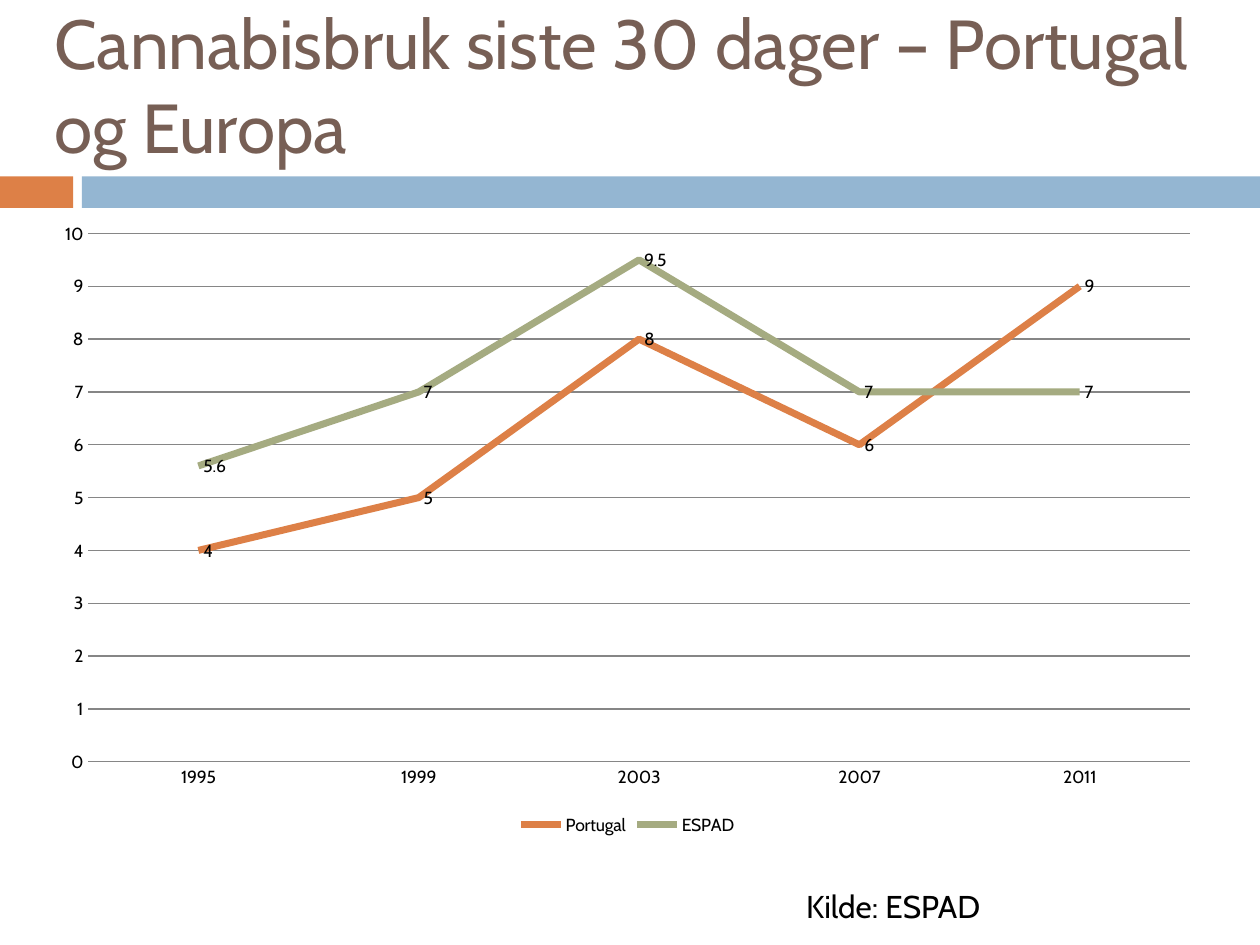
from pptx import Presentation
from pptx.chart.data import CategoryChartData
from pptx.dml.color import RGBColor
from pptx.enum.chart import (XL_CHART_TYPE, XL_LABEL_POSITION, XL_LEGEND_POSITION,
                             XL_MARKER_STYLE, XL_TICK_MARK)
from pptx.enum.shapes import MSO_SHAPE
from pptx.enum.text import MSO_ANCHOR, MSO_AUTO_SIZE, PP_ALIGN
from pptx.util import Inches, Pt

COLORS = {"orange": "DD8047", "blue": "94B6D2", "green": "A5AB81",
          "brown": "775F55", "black": "000000", "grid": "868686"}
YEARS = ["1995", "1999", "2003", "2007", "2011"]
SERIES = {"Portugal": ([4, 5, 8, 6, 9], "orange"),
          "ESPAD": ([5.6, 7, 9.5, 7, 7], "green")}


class Deck:
    font = "Cabin"

    def __init__(self, width, height):
        self.prs = Presentation()
        self.prs.slide_width = Inches(width)
        self.prs.slide_height = Inches(height)
        self.s = None

    def add_slide(self):
        self.s = self.prs.slides.add_slide(self.prs.slide_layouts[5])

    def box(self, x, y, w, h):
        width, height = self.prs.slide_width, self.prs.slide_height
        return [round(share * side / 100) for share, side in
                ((x, width), (y, height), (w, width), (h, height))]

    def color(self, name):
        return RGBColor.from_string(COLORS[name])

    def style(self, font, size, color):
        font.name = self.font
        font.size = Pt(size)
        font.color.rgb = self.color(color)

    def fill_text(self, tf, text, size, color):
        tf.word_wrap = True
        p = tf.paragraphs[0]
        p.text = text
        p.alignment = PP_ALIGN.LEFT
        self.style(p.font, size, color)

    def title(self, text, *area):
        sp = self.s.shapes.title
        sp.left, sp.top, sp.width, sp.height = self.box(*area)
        tf = sp.text_frame
        tf.auto_size = MSO_AUTO_SIZE.NONE
        tf.vertical_anchor = MSO_ANCHOR.MIDDLE
        self.fill_text(tf, text, 39.6, "brown")

    def bar(self, color, *area):
        sp = self.s.shapes.add_shape(MSO_SHAPE.RECTANGLE, *self.box(*area))
        sp.shadow.inherit = False
        sp.fill.solid()
        sp.fill.fore_color.rgb = self.color(color)
        sp.line.fill.background()

    def text(self, text, *area):
        tf = self.s.shapes.add_textbox(*self.box(*area)).text_frame
        self.fill_text(tf, text, 18, "black")
        tf.auto_size = MSO_AUTO_SIZE.SHAPE_TO_FIT_TEXT

    def line_chart(self, categories, series, *area):
        data = CategoryChartData()
        data.categories = categories
        for name, (values, _) in series.items():
            data.add_series(name, values)
        chart = self.s.shapes.add_chart(
            XL_CHART_TYPE.LINE, *self.box(*area), data).chart
        self.style(chart.font, 10, "black")
        chart.has_title = False
        chart.has_legend = True
        chart.legend.position = XL_LEGEND_POSITION.BOTTOM
        chart.legend.include_in_layout = False
        self.axes(chart)
        plot = chart.plots[0]
        plot.vary_by_categories = False
        for line in plot.series:
            self.series_line(line, series[line.name][1])

    def axes(self, chart):
        for axis in (chart.category_axis, chart.value_axis):
            axis.major_tick_mark = axis.minor_tick_mark = XL_TICK_MARK.NONE
        axis = chart.value_axis
        axis.minimum_scale, axis.maximum_scale, axis.major_unit = 0, 10, 1
        axis.format.line.fill.background()
        axis.has_major_gridlines = True
        for line in (axis.major_gridlines.format.line,
                     chart.category_axis.format.line):
            line.color.rgb = self.color("grid")
            line.width = Pt(0.75)

    def series_line(self, line, color):
        line.smooth = False
        line.marker.style = XL_MARKER_STYLE.NONE
        line.format.line.color.rgb = self.color(color)
        line.format.line.width = Pt(4)
        labels = line.data_labels
        labels.show_value = True
        labels.position = XL_LABEL_POSITION.RIGHT


def main():
    deck = Deck(10, 7.5)
    deck.add_slide()
    deck.bar("orange", 0, 18.67, 5.8, 3.33)
    deck.bar("blue", 6.5, 18.67, 93.5, 3.33)
    deck.title("Cannabisbruk siste 30 dager – Portugal og Europa",
               3.3, 3.33, 94.8, 11.07)
    deck.line_chart(YEARS, SERIES, 3.3, 22.27, 93, 66.67)
    deck.text("Kilde: ESPAD", 63, 93.2, 25, 5.33)
    deck.prs.save("out.pptx")


if __name__ == "__main__":
    main()
